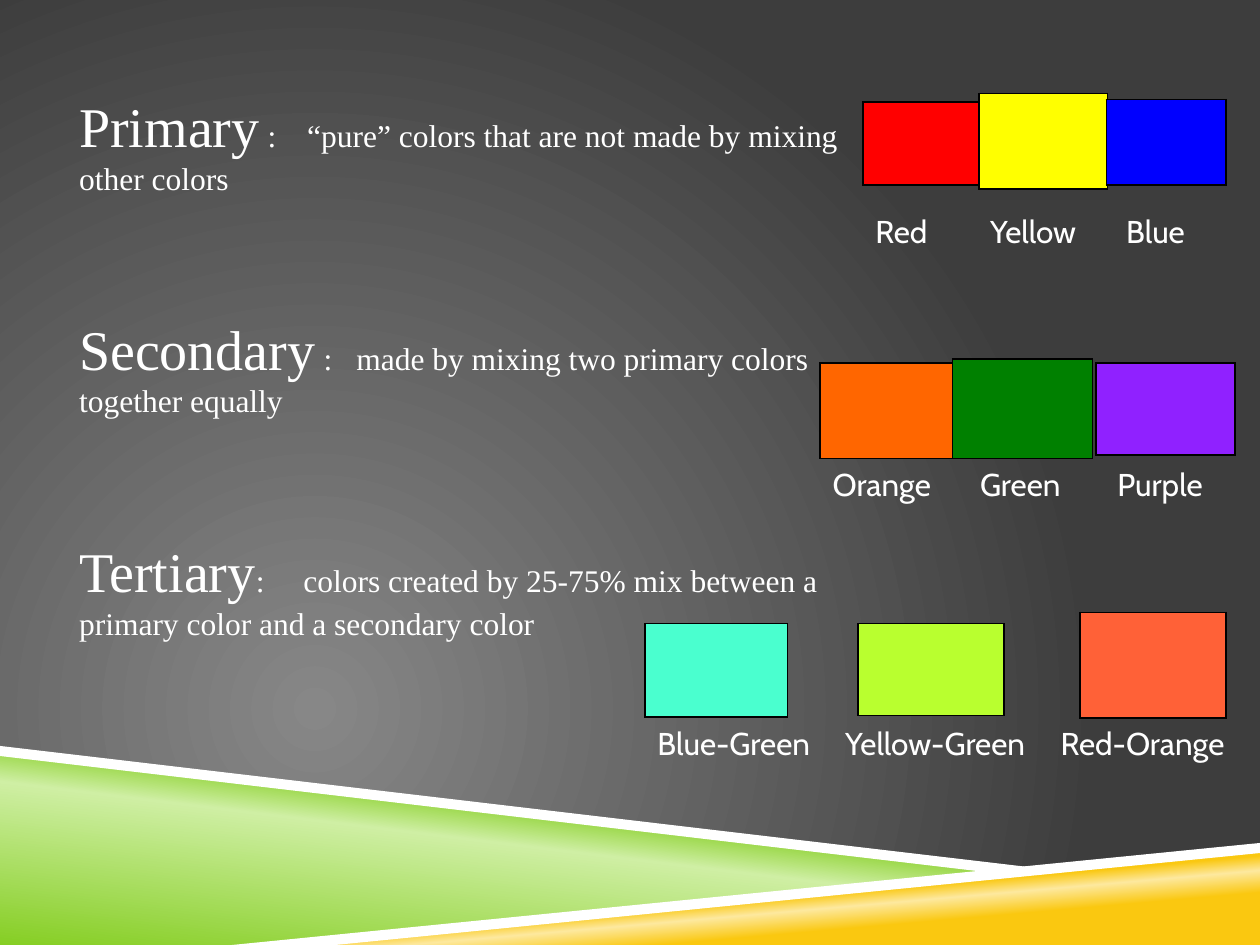
from lxml import etree
from pptx import Presentation
from pptx.dml.color import RGBColor as RGB
from pptx.oxml.ns import qn
from pptx.util import Inches, Pt

WHITE = RGB(0xFF, 0xFF, 0xFF)
BLACK = RGB(0x00, 0x00, 0x00)
LIGHT = RGB(0x87, 0x87, 0x87)
DARK = RGB(0x3D, 0x3D, 0x3D)
LEAF = RGB(0x86, 0xCE, 0x24)
PALE = RGB(0xCF, 0xEF, 0xA4)
GOLD = RGB(0xFA, 0xC8, 0x10)
CREAM = RGB(0xFD, 0xE9, 0x9F)
RED = RGB(0xFF, 0x00, 0x00)
YELLOW = RGB(0xFF, 0xFF, 0x00)
BLUE = RGB(0x00, 0x00, 0xFF)
ORANGE = RGB(0xFF, 0x66, 0x00)
GREEN = RGB(0x00, 0x80, 0x00)
PURPLE = RGB(0x90, 0x21, 0xFF)
AQUA = RGB(0x4A, 0xFF, 0xCF)
LIME = RGB(0xB9, 0xFF, 0x2F)
CORAL = RGB(0xFF, 0x61, 0x37)

SERIF = "Times New Roman"
SANS = "Cabin"

BANDS = [
    ([(0, 5.97), (7.92, 6.92), (2, 7.5), (0, 7.5)],
     [(0, LEAF), (52, PALE), (66, LEAF)], 277),
    ([(1.98, 7.5), (10, 6.72), (10, 7.5)],
     [(28, GOLD), (40, CREAM), (48, GOLD)], 265),
    ([(0, 5.92), (0, 6), (7.9, 6.93), (8.32, 6.9)], None, None),
    ([(10, 6.69), (1.84, 7.5), (2.66, 7.5), (10, 6.77)], None, None),
]

TERMS = [
    ("Primary", " :", "“pure” colors that are not made by mixing other colors", 1.81),
    ("Secondary", " :", "made by mixing two primary colors together equally", 2.2),
    ("Tertiary", ":", "colors created by 25-75% mix between a primary color "
     "and a secondary color", 1.78),
]

SWATCHES = [
    (6.85, 0.81, 0.92, 0.66, RED),
    (7.77, 0.74, 1.02, 0.76, YELLOW),
    (8.78, 0.79, 0.95, 0.68, BLUE),
    (6.51, 2.88, 1.1, 0.76, ORANGE),
    (7.56, 2.85, 1.11, 0.79, GREEN),
    (8.7, 2.88, 1.1, 0.73, PURPLE),
    (5.12, 4.95, 1.13, 0.74, AQUA),
    (6.81, 4.95, 1.16, 0.73, LIME),
    (8.57, 4.86, 1.16, 0.84, CORAL),
]

LABELS = [
    ((6.85, 1.63, 2.96, 0.4), ["Red", "Yellow", "Blue"], [0.91, 1.99]),
    ((6.51, 3.64, 3.33, 0.4), ["Orange", "Green", "Purple"], [1.17, 2.26]),
    ((5.12, 5.7, 5.07, 0.4), ["Blue-Green", "Yellow-Green", "Red-Orange"], [1.49, 3.2]),
]


def sub(node, tag, **attrs):
    return etree.SubElement(node, qn(tag), {k: str(v) for k, v in attrs.items()})


def blend(fill, grad, stops, angle=None):
    fill.gradient()
    for child in list(grad()):
        grad().remove(child)
    items = sub(grad(), "a:gsLst")
    for pos, color in stops:
        sub(sub(items, "a:gs", pos=pos * 1000), "a:srgbClr", val=color)
    if angle is None:
        ring = sub(grad(), "a:path", path="circle")
        sub(ring, "a:fillToRect", l=50000, t=100000, r=100000, b=50000)
    else:
        sub(grad(), "a:lin", ang=angle * 60000, scaled=0)


def add_back(slide):
    def grad():
        return slide.element.find(".//" + qn("p:bgPr")).find(qn("a:gradFill"))
    blend(slide.background.fill, grad, [(0, LIGHT), (100, DARK)])


def add_band(slide, points, stops, angle):
    spots = [(Inches(x), Inches(y)) for x, y in points]
    pen = slide.shapes.build_freeform(*spots[0])
    pen.add_line_segments(spots[1:], close=True)
    band = pen.convert_to_shape()
    band.shadow.inherit = False
    band.line.fill.background()
    if stops:
        blend(band.fill, lambda: band.element.spPr.find(qn("a:gradFill")), stops, angle)
    else:
        band.fill.solid()
        band.fill.fore_color.rgb = WHITE


def add_box(slide, area):
    frame = slide.shapes.add_textbox(*map(Inches, area)).text_frame
    frame.word_wrap = True
    return frame


def add_tabs(para, stops):
    tabs = sub(para._p.get_or_add_pPr(), "a:tabLst")
    for stop in stops:
        sub(tabs, "a:tab", pos=Inches(stop), algn="l")


def add_run(para, text, face, size):
    run = para.add_run()
    run.text = text
    run.font.name = face
    run.font.size = Pt(size)
    run.font.color.rgb = WHITE


def add_terms(slide):
    frame = add_box(slide, (0.53, 0.68, 6.28, 4.44))
    for i, (term, mark, text, stop) in enumerate(TERMS):
        para = frame.add_paragraph() if i else frame.paragraphs[0]
        add_tabs(para, [stop])
        if i:
            para.space_before = Pt(67)
        add_run(para, term, SERIF, 32)
        add_run(para, f"{mark}\t{text}", SERIF, 18)


def add_swatch(slide, x, y, wide, high, color):
    area = map(Inches, (x, y, wide, high))
    table = slide.shapes.add_table(1, 1, *area).table
    table.first_row = False
    table.horz_banding = False
    cell = table.cell(0, 0)
    props = cell._tc.get_or_add_tcPr()
    for side in ("a:lnL", "a:lnR", "a:lnT", "a:lnB"):
        edge = sub(props, side, w=Pt(1))
        sub(sub(edge, "a:solidFill"), "a:srgbClr", val=BLACK)
    cell.fill.solid()
    cell.fill.fore_color.rgb = color


def add_label(slide, area, names, stops):
    para = add_box(slide, area).paragraphs[0]
    add_tabs(para, stops)
    add_run(para, "\t".join(names), SANS, 18)


def main():
    deck = Presentation()
    deck.slide_width, deck.slide_height = Inches(10), Inches(7.5)
    slide = deck.slides.add_slide(deck.slide_layouts[6])
    add_back(slide)
    for band in BANDS:
        add_band(slide, *band)
    add_terms(slide)
    for swatch in SWATCHES:
        add_swatch(slide, *swatch)
    for label in LABELS:
        add_label(slide, *label)
    deck.save("out.pptx")


if __name__ == "__main__":
    main()
